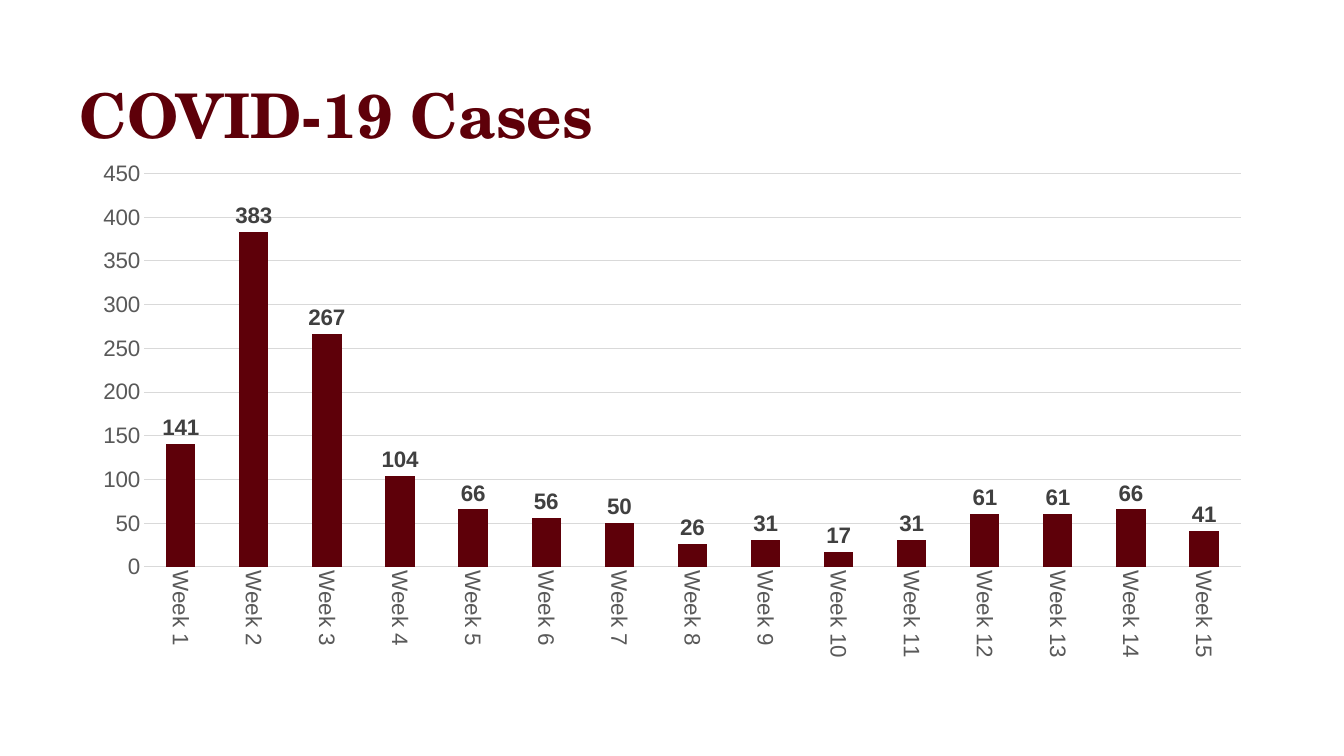
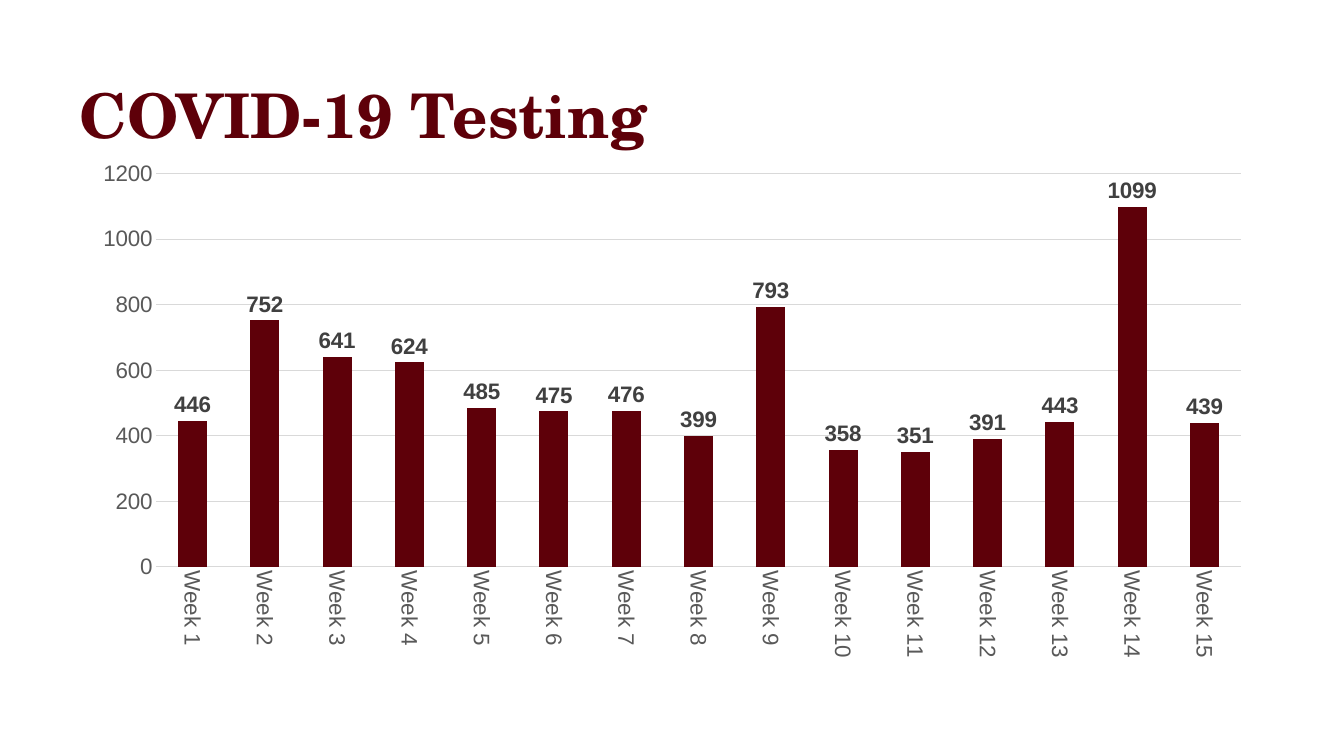
from dataclasses import dataclass

from pptx import Presentation
from pptx.chart.chart import Chart
from pptx.chart.data import CategoryChartData
from pptx.dml.color import RGBColor
from pptx.enum.chart import XL_CHART_TYPE, XL_LABEL_POSITION, XL_TICK_MARK
from pptx.enum.text import MSO_ANCHOR
from pptx.slide import Slide
from pptx.text.text import Font
from pptx.util import Inches, Pt

SLIDE_WIDTH, SLIDE_HEIGHT = Inches(13.33), Inches(7.5)
COLUMN, ROW = SLIDE_WIDTH / 100, SLIDE_HEIGHT / 10
MARGIN = 5.93  # columns
COLORS = {"maroon": "5E0009", "axis": "595959", "label": "404040",
          "grid": "D9D9D9", "text": "000000"}
TITLE_FONT, CHART_FONT = "TeX Gyre Schola", "Arial"


@dataclass(frozen=True)
class Band:
    """A full-width strip between the margins, measured in grid rows."""
    top: float
    height: float

    def box(self) -> tuple[int, int, int, int]:
        return (int(MARGIN * COLUMN), int(self.top * ROW),
                int((100 - 2 * MARGIN) * COLUMN), int(self.height * ROW))


@dataclass(frozen=True)
class WeeklyReport:
    title: str
    counts: tuple[int, ...]
    axis_max: int
    axis_step: int


TITLE_BAND = Band(1, 1)
CHART_BAND = Band(2, 6.84)
REPORTS = (
    WeeklyReport("COVID-19 Cases",
                 (141, 383, 267, 104, 66, 56, 50, 26, 31, 17, 31, 61, 61, 66, 41),
                 450, 50),
    WeeklyReport("COVID-19 Testing",
                 (446, 752, 641, 624, 485, 475, 476, 399, 793, 358, 351, 391,
                  443, 1099, 439),
                 1200, 200),
)


def color(name: str) -> RGBColor:
    return RGBColor.from_string(COLORS[name])


def style_font(font: Font, face: str, size: int, color_name: str,
               bold: bool = False) -> None:
    font.name = face
    font.size = Pt(size)
    font.bold = bold
    font.color.rgb = color(color_name)


def add_title(slide: Slide, title: str) -> None:
    frame = slide.shapes.add_textbox(*TITLE_BAND.box()).text_frame
    frame.word_wrap = True
    frame.vertical_anchor = MSO_ANCHOR.BOTTOM
    frame.margin_left = frame.margin_right = 0
    frame.margin_top = frame.margin_bottom = 0
    frame.text = title
    style_font(frame.paragraphs[0].runs[0].font, TITLE_FONT, 44, "maroon", True)


def style_axes(chart: Chart, report: WeeklyReport) -> None:
    weeks, counts = chart.category_axis, chart.value_axis
    for axis in (weeks, counts):
        axis.major_tick_mark = axis.minor_tick_mark = XL_TICK_MARK.NONE
        style_font(axis.tick_labels.font, CHART_FONT, 16, "axis")
    counts.minimum_scale = 0
    counts.maximum_scale = report.axis_max
    counts.major_unit = report.axis_step
    counts.format.line.fill.background()
    for line in (weeks.format.line, counts.major_gridlines.format.line):
        line.color.rgb = color("grid")
        line.width = Pt(0.75)
    # Turn the week names to read downwards
    week_text = weeks._element.txPr.bodyPr
    week_text.set("rot", "5400000")
    week_text.set("vert", "horz")


def add_weekly_chart(slide: Slide, report: WeeklyReport) -> None:
    data = CategoryChartData()
    data.categories = [f"Week {week}" for week in range(1, len(report.counts) + 1)]
    data.add_series("Series 1", report.counts)
    chart = slide.shapes.add_chart(
        XL_CHART_TYPE.COLUMN_CLUSTERED, *CHART_BAND.box(), data).chart
    chart.has_title = chart.has_legend = False
    style_font(chart.font, CHART_FONT, 16, "text")
    style_axes(chart, report)

    plot = chart.plots[0]
    plot.gap_width = 150
    plot.vary_by_categories = False
    bars = plot.series[0]
    bars.format.fill.solid()
    bars.format.fill.fore_color.rgb = color("maroon")
    labels = bars.data_labels
    labels.show_value = True
    labels.position = XL_LABEL_POSITION.OUTSIDE_END
    style_font(labels.font, CHART_FONT, 16, "label", True)


def main() -> None:
    deck = Presentation()
    deck.slide_width, deck.slide_height = SLIDE_WIDTH, SLIDE_HEIGHT
    blank = deck.slide_layouts[6]
    for report in REPORTS:
        slide = deck.slides.add_slide(blank)
        add_weekly_chart(slide, report)
        add_title(slide, report.title)
    deck.save("out.pptx")


if __name__ == "__main__":
    main()
